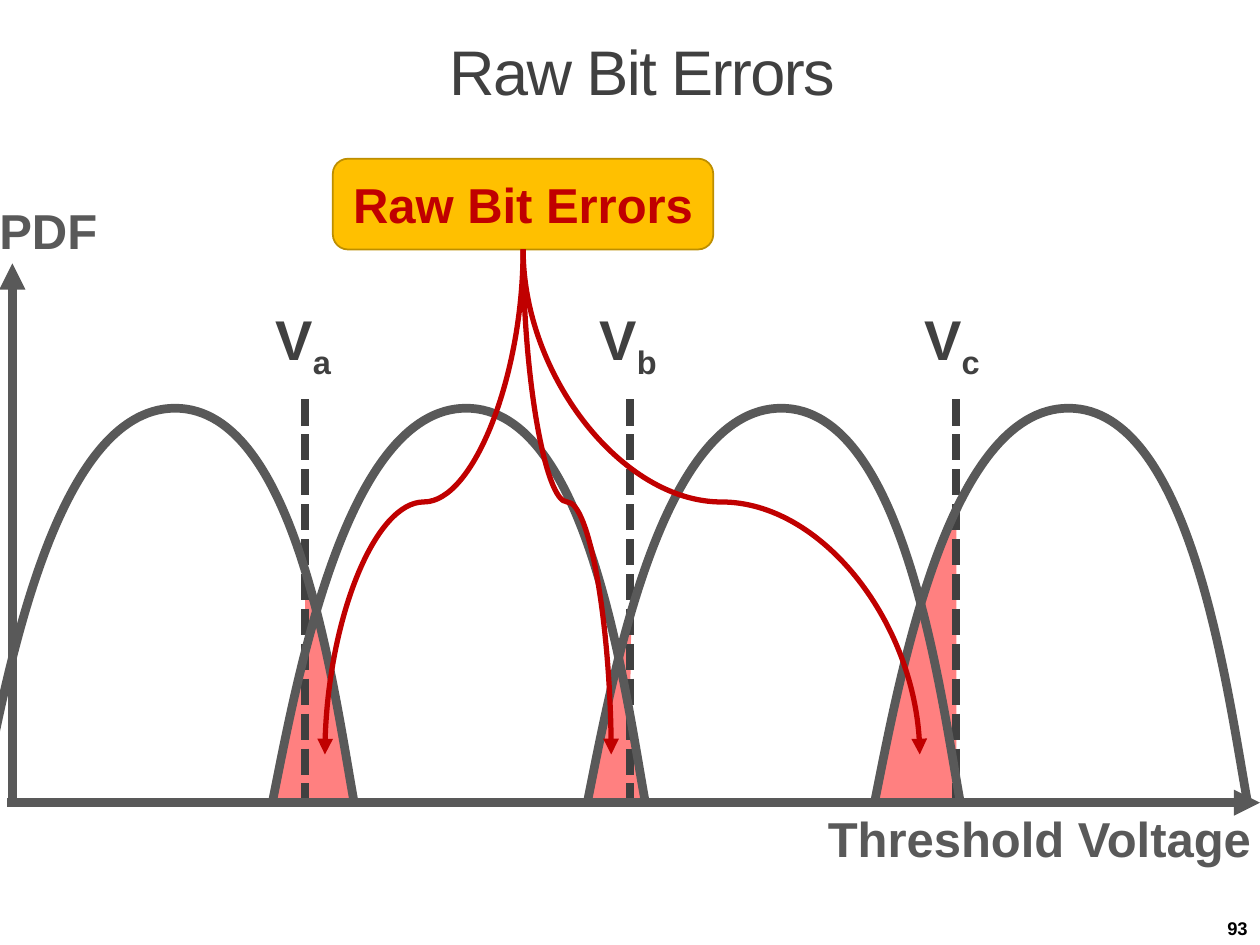
from dataclasses import dataclass
from typing import NamedTuple

from lxml import etree
from pptx import Presentation
from pptx import util as u
from pptx.dml.color import RGBColor
from pptx.enum import dml, shapes, text
from pptx.oxml.ns import qn

Cm, Pt = u.Cm, u.Pt
KIND = shapes.MSO_CONNECTOR
ALIGN = text.PP_ALIGN
ANCHOR = text.MSO_ANCHOR


@dataclass(frozen=True)
class Theme:
    font: str = "Arial"
    white: str = "FFFFFF"
    black: str = "000000"
    dark: str = "404040"
    grey: str = "595959"
    red: str = "C00000"
    pink: str = "FF8080"
    gold: str = "FFC000"
    edge: str = "BD8E00"
    title: float = 36
    volt: float = 32
    label: float = 28
    page: float = 10.5
    thick: float = 5
    arrow: float = 3
    thin: float = 1


class Point(NamedTuple):
    x: float
    y: float


class Box(NamedTuple):
    x: float
    y: float
    w: float
    h: float


class Limit(NamedTuple):
    """A read voltage, its label and the error area around it."""
    sub: str
    x: float
    left: float
    tip: Point
    area: list[Point]


T = Theme()
BASE, PEAK = 16.18, 8.23
FOOT = 16.2
STARTS = [-0.38, 5.49, 11.84, 17.63]
# Bezier points of one bell, offset from its left foot
BELL = [Point(0.47, 13.87), Point(1.45, PEAK), Point(3.91, PEAK),
        Point(6.38, PEAK), Point(7.11, 13.92), Point(7.52, BASE)]
CALL = Box(6.71, 3.2, 7.67, 1.83)
TIP = 15.21
LIMITS = [
    Limit("a", 6.15, 4.88, Point(6.55, TIP),
          [Point(5.46, FOOT), Point(6.15, 13.26), Point(6.15, 11.51),
           Point(6.4, 12.47), Point(7.11, FOOT)]),
    Limit("b", 12.7, 11.43, Point(12.32, TIP),
          [Point(11.81, BASE), Point(12.47, 13.26), Point(12.73, 12.29),
           Point(12.7, 14.35), Point(13, FOOT)]),
    Limit("c", 19.27, 17.96, Point(18.54, TIP),
          [Point(17.63, BASE), Point(18.21, 13.51), Point(18.57, 12.14),
           Point(19.28, 10.21), Point(19.28, 15.62), Point(19.33, FOOT)]),
]


def rgb(code: str) -> RGBColor:
    return RGBColor.from_string(code)


def paint(shape, code: str) -> None:
    shape.fill.solid()
    shape.fill.fore_color.rgb = rgb(code)


def ink(shape, code: str, width: float) -> None:
    shape.line.color.rgb = rgb(code)
    shape.line.width = Pt(width)


def write(para, words: str, size: float, code: str, bold: bool = True):
    run = para.add_run()
    run.text = words
    run.font.name, run.font.size = T.font, Pt(size)
    run.font.bold, run.font.color.rgb = bold, rgb(code)
    return run


def label(slide, box: Box, words: str, size: float, code: str,
          align=ALIGN.CENTER, anchor=ANCHOR.TOP):
    frame = slide.shapes.add_textbox(*map(Cm, box)).text_frame
    frame.word_wrap = True
    frame.vertical_anchor = anchor
    para = frame.paragraphs[0]
    para.alignment = align
    write(para, words, size, code)
    return para


def outline(slide, start: Point, rest: list[Point], close: bool):
    pen = slide.shapes.build_freeform(Cm(start.x), Cm(start.y))
    pen.add_line_segments([(Cm(p.x), Cm(p.y)) for p in rest], close=close)
    shape = pen.convert_to_shape()
    shape.shadow.inherit = False
    return shape


def area(slide, pts: list[Point]) -> None:
    shape = outline(slide, pts[0], pts[1:], True)
    paint(shape, T.pink)
    shape.line.fill.background()


def bell(slide, x: float) -> None:
    """Draw a bell, turning each three line segments into one Bezier."""
    pts = [Point(x + p.x, p.y) for p in BELL]
    shape = outline(slide, Point(x, BASE), pts, False)
    shape.fill.background()
    ink(shape, T.grey, T.thick)
    trace = shape._element.find(".//" + qn("a:path"))
    segs = trace.findall(qn("a:lnTo"))
    for i in range(0, len(segs), 3):
        curve = etree.SubElement(trace, qn("a:cubicBezTo"))
        for seg in segs[i:i + 3]:
            curve.append(seg[0])
            trace.remove(seg)


def link(slide, start: Point, end: Point, code: str, width: float,
         kind=KIND.STRAIGHT, head: bool = False):
    line = slide.shapes.add_connector(kind, *map(Cm, (*start, *end)))
    ink(line, code, width)
    etree.SubElement(line._element.spPr, qn("a:effectLst"))
    if head:
        tail = etree.SubElement(line.line._get_or_add_ln(), qn("a:tailEnd"))
        tail.set("type", "triangle")
    return line


def swoop(slide, start: Point, end: Point) -> None:
    """Curve that leaves and arrives vertically: a quarter-turned connector."""
    mid = Point((start.x + end.x) / 2, (start.y + end.y) / 2)
    half = Point((end.y - start.y) / 2, abs(end.x - start.x) / 2)
    right = end.x > start.x
    side = half.x if right else -half.x
    line = link(slide, Point(mid.x + side, mid.y - half.y),
                Point(mid.x - side, mid.y + half.y),
                T.red, T.arrow, KIND.CURVE, True)
    turn = 270 if right else 90
    line._element.spPr.find(qn("a:xfrm")).set("rot", str(turn * 60000))


def heading(slide) -> None:
    title = slide.shapes.title
    title.left, title.top, title.width, title.height = map(
        Cm, (0, 0, 25.4, 3.02))
    paint(title, T.white)
    frame = title.text_frame
    frame.auto_size = text.MSO_AUTO_SIZE.NONE
    frame.vertical_anchor = ANCHOR.MIDDLE
    para = frame.paragraphs[0]
    para.alignment, para.line_spacing = ALIGN.CENTER, 0.9
    props = para._p.get_or_add_pPr()
    props.set("marL", str(Cm(0.48)))
    props.set("indent", "0")
    run = write(para, "Raw Bit Errors", T.title, T.dark, False)
    run._r.get_or_add_rPr().set("spc", "-90")


def callout(slide) -> None:
    shape = slide.shapes.add_shape(
        shapes.MSO_SHAPE.ROUNDED_RECTANGLE, *map(Cm, CALL))
    shape.shadow.inherit = False
    paint(shape, T.gold)
    ink(shape, T.edge, T.thin)
    shape.text_frame.vertical_anchor = ANCHOR.MIDDLE
    para = shape.text_frame.paragraphs[0]
    para.alignment = ALIGN.CENTER
    write(para, "Raw Bit Errors", T.label, T.red)


def main() -> None:
    deck = Presentation()
    deck.slide_width, deck.slide_height = Cm(25.4), Cm(19.05)
    slide = deck.slides.add_slide(deck.slide_layouts[5])
    heading(slide)
    for lim in reversed(LIMITS):
        area(slide, lim.area)
    label(slide, Box(22.76, 18.11, 2.64, 0.94), "93", T.page, T.black,
          ALIGN.RIGHT, ANCHOR.BOTTOM)
    label(slide, Box(16.28, BASE, 9.35, 1.45), "Threshold Voltage",
          T.label, T.grey)
    for lim in LIMITS:
        line = link(slide, Point(lim.x, 8.05), Point(lim.x, BASE),
                    T.dark, T.thick)
        line.line.dash_style = dml.MSO_LINE.SQUARE_DOT
    link(slide, Point(0.25, BASE), Point(0.25, 5.31), T.grey, T.thick,
         head=True)
    label(slide, Box(-0.36, 3.91, 2.67, 1.45), "PDF", T.label, T.grey)
    for x in STARTS:
        bell(slide, x)
    link(slide, Point(0.15, BASE), Point(25.4, BASE), T.grey, T.thick,
         head=True)
    for lim in LIMITS:
        para = label(slide, Box(lim.left, 6.02, 2.46, 1.63), "V",
                     T.volt, T.dark)
        sub = write(para, lim.sub, T.volt, T.dark)
        sub._r.get_or_add_rPr().set("baseline", "-25000")
    callout(slide)
    root = Point(CALL.x + CALL.w / 2, CALL.y + CALL.h)
    for lim in LIMITS:
        swoop(slide, root, lim.tip)
    deck.save("out.pptx")


if __name__ == "__main__":
    main()
